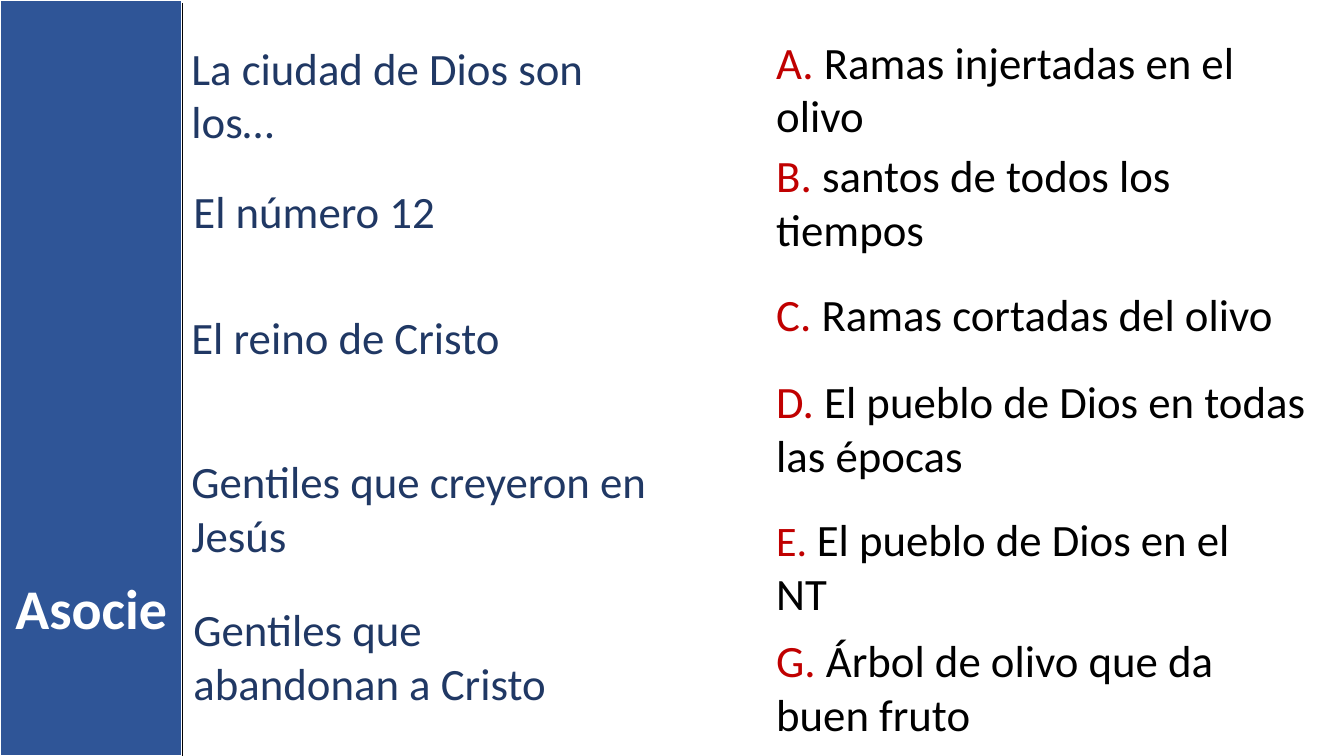
from dataclasses import dataclass

from lxml.etree import SubElement
from pptx import Presentation
from pptx.dml.color import RGBColor
from pptx.enum.shapes import MSO_CONNECTOR as CONNECTOR, MSO_SHAPE as SHAPE
from pptx.enum.text import MSO_AUTO_SIZE as AUTO_SIZE, PP_ALIGN as ALIGN
from pptx.oxml.ns import qn
from pptx.slide import Slide
from pptx.util import Emu, Pt

FONT = "Calibri"
WHITE, BLACK = "FFFFFF", "000000"
BLUE, NAVY, RED = "2F5597", "203864", "C00000"
PAGE_WIDTH, PAGE_HEIGHT = 1333, 750
BAND_WIDTH = 181
ANSWER_LEFT = 760
ONE_LINE, TWO_LINES = 64, 118


@dataclass
class Prompt:
    text: str
    left: int
    top: int
    width: int
    height: int = TWO_LINES


@dataclass
class Answer:
    letter: str
    text: str
    top: int
    width: int
    height: int = TWO_LINES
    letter_size: int = 32


PROMPTS = [
    Prompt("La ciudad de Dios son los…", 180, 35, 443),
    Prompt("El número 12", 182, 177, 474, ONE_LINE),
    Prompt("El reino de Cristo", 180, 302, 516, ONE_LINE),
    Prompt("Gentiles que creyeron en Jesús", 180, 445, 501),
    Prompt("Gentiles que abandonan a Cristo", 182, 592, 441),
]
ANSWERS = [
    Answer("A", "Ramas injertadas en el olivo", 29, 558),
    Answer("B", "santos de todos los tiempos", 142, 549),
    Answer("C", "Ramas cortadas del olivo", 280, 527, ONE_LINE),
    Answer("D", "El pueblo de Dios en todas las épocas", 366, 558),
    Answer("E", "El pueblo de Dios en el NT", 503, 513, letter_size=30),
    Answer("G", "Árbol de olivo que da buen fruto", 623, 520),
]


def px(length: int) -> Emu:
    return Emu(length * 9144)


def color(code: str) -> RGBColor:
    return RGBColor.from_string(code)


def add_text(page: Slide, left: int, top: int, width: int, height: int,
             spans: list[tuple[str, str, int]], bold: bool = False,
             align: ALIGN = ALIGN.LEFT) -> None:
    """Write one paragraph made of (text, colour, size) spans."""
    box = page.shapes.add_textbox(px(left), px(top), px(width), px(height))
    frame = box.text_frame
    frame.word_wrap = True
    frame.auto_size = AUTO_SIZE.SHAPE_TO_FIT_TEXT
    para = frame.paragraphs[0]
    para.alignment = align
    para.font.name = FONT
    para.font.bold = bold
    for text, code, size in spans:
        span = para.add_run()
        span.text = text
        span.font.size = Pt(size)
        span.font.color.rgb = color(code)


def add_band(page: Slide) -> None:
    band = page.shapes.add_shape(SHAPE.RECTANGLE, px(0), px(0), px(BAND_WIDTH), px(PAGE_HEIGHT))
    band.shadow.inherit = False
    band.fill.solid()
    band.fill.fore_color.rgb = color(BLUE)
    band.line.color.rgb = color(WHITE)
    band.line.width = Pt(1.5)


def add_edge(page: Slide) -> None:
    edge = page.shapes.add_connector(CONNECTOR.STRAIGHT, px(BAND_WIDTH), px(3),
                                     px(BAND_WIDTH), px(PAGE_HEIGHT))
    edge.line.color.rgb = color(BLACK)
    edge.line.width = Pt(1)
    SubElement(edge._element.spPr, qn("a:effectLst"))


def main() -> None:
    deck = Presentation()
    deck.slide_width, deck.slide_height = px(PAGE_WIDTH), px(PAGE_HEIGHT)
    page = deck.slides.add_slide(deck.slide_layouts[6])

    # Side band
    add_band(page)

    # Prompts on the left
    for prompt in PROMPTS:
        add_text(page, prompt.left, prompt.top, prompt.width, prompt.height,
                 [(prompt.text, NAVY, 32)])

    # Lettered answers on the right
    for answer in ANSWERS:
        add_text(page, ANSWER_LEFT, answer.top, answer.width, answer.height,
                 [(f"{answer.letter}. ", RED, answer.letter_size), (answer.text, BLACK, 32)])

    # Band title and edge
    add_text(page, 0, 564, BAND_WIDTH, 77, [("Asocie", WHITE, 40)], bold=True, align=ALIGN.CENTER)
    add_edge(page)

    deck.save("out.pptx")


if __name__ == "__main__":
    main()
